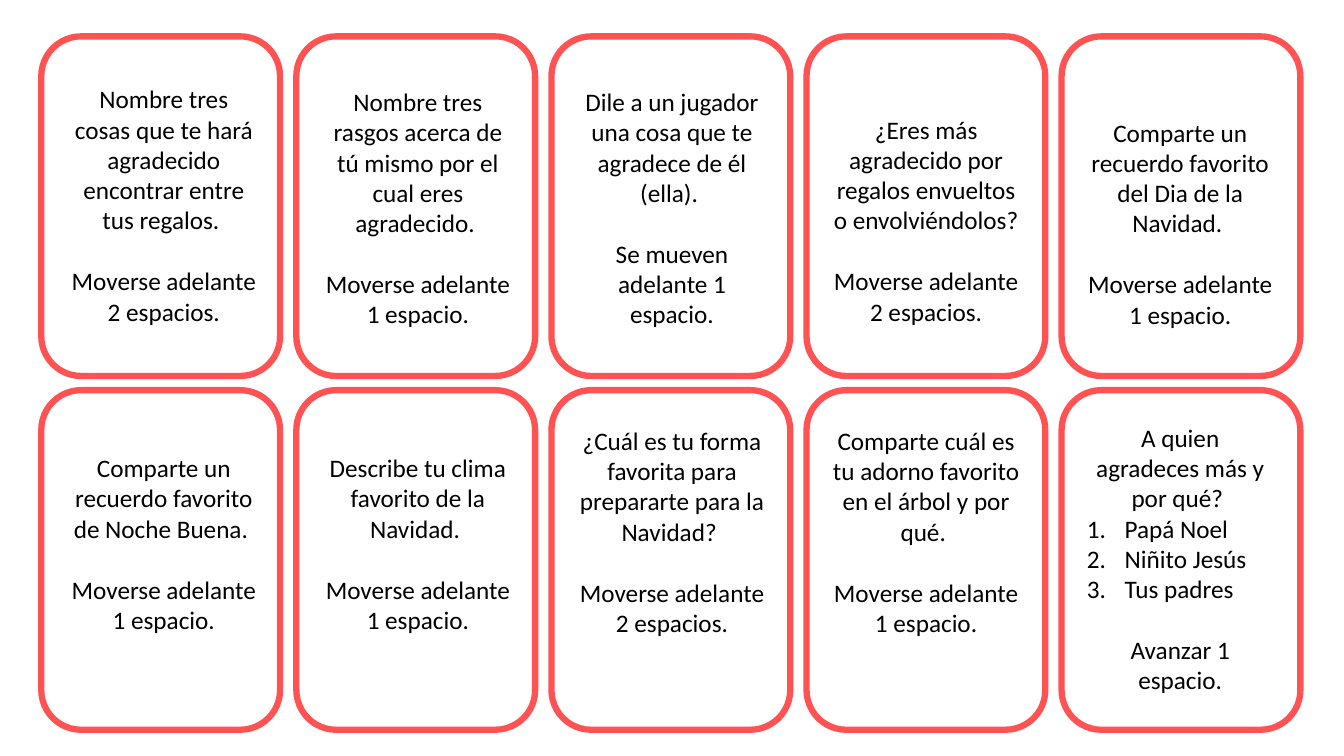
from pptx import Presentation
from pptx.dml.color import RGBColor
from pptx.enum.shapes import MSO_SHAPE as Shape
from pptx.enum.text import MSO_AUTO_SIZE as AutoSize, PP_ALIGN as Align
from pptx.oxml.ns import qn
from pptx.util import Pt
from lxml.etree import SubElement

COLUMNS = 5
CARD_LEFT, CARD_TOP = 29.5, 26
CARD_WIDTH, CARD_HEIGHT = 170.6, 242.6
COLUMN_PITCH, ROW_PITCH = 182.2, 252.7
TEXT_LEFT, TEXT_PITCH, TEXT_WIDTH = 43.2, 181.5, 147.6
LINE_HEIGHT, INSETS = 21.8, 7.2
LIST_INDENT = 27

ONE_SPACE = "Moverse adelante 1 espacio."
TWO_SPACES = "Moverse adelante 2 espacios."

# Each card: text top, line count, prompt, list choices, move
CARDS = [
    (56.2, 8, "Nombre tres cosas que te hará agradecido encontrar entre tus regalos. ", [], TWO_SPACES),
    (58.3, 8, "Nombre tres rasgos acerca de tú mismo por el cual eres agradecido. ", [], ONE_SPACE),
    (58.3, 8, "Dile a un jugador una cosa que te agradece de él (ella). ", [], "Se mueven adelante 1 espacio."),
    (77.8, 7, "¿Eres más agradecido por regalos envueltos o envolviéndolos? ", [], TWO_SPACES),
    (79.9, 7, "Comparte un recuerdo favorito del Dia de la Navidad. ", [], ONE_SPACE),
    (319.7, 6, "Comparte un recuerdo favorito de Noche Buena. ", [], ONE_SPACE),
    (319.7, 6, "Describe tu clima favorito de la Navidad. ", [], ONE_SPACE),
    (300.2, 7, "¿Cuál es tu forma favorita para prepararte para la Navidad? ", [], TWO_SPACES),
    (300.2, 7, "Comparte cuál es tu adorno favorito en el árbol y por qué. ", [], ONE_SPACE),
    (298.1, 9, "A quien agradeces más y por qué? ",
     ["Papá Noel", "Niñito Jesús", "Tus padres"], "Avanzar 1 espacio."),
]


def color(value):
    return RGBColor.from_string(value)


def add_frame(shapes, left, top):
    frame = shapes.add_shape(Shape.ROUNDED_RECTANGLE, Pt(left), Pt(top),
                             Pt(CARD_WIDTH), Pt(CARD_HEIGHT))
    frame.shadow.inherit = False
    frame.fill.solid()
    frame.fill.fore_color.rgb = color("FFFFFF")
    frame.line.color.rgb = color("FF5353")
    frame.line.width = Pt(4.5)


def format_para(para, text, align=Align.CENTER):
    para.text = text
    para.alignment = align
    para.font.name = "Calibri"
    para.font.size = Pt(18)
    para.font.color.rgb = color("000000")


def number_para(para):
    properties = para._p.get_or_add_pPr()
    properties.set("marL", str(Pt(LIST_INDENT)))
    properties.set("indent", str(-Pt(LIST_INDENT)))
    numbering = SubElement(properties, qn("a:buAutoNum"), type="arabicPeriod")
    properties.insert(0, numbering)


def add_card_text(shapes, left, top, lines, prompt, choices, move):
    box = shapes.add_textbox(Pt(left), Pt(top), Pt(TEXT_WIDTH),
                             Pt(lines * LINE_HEIGHT + INSETS))
    frame = box.text_frame
    frame.word_wrap = True
    frame.auto_size = AutoSize.SHAPE_TO_FIT_TEXT
    format_para(frame.paragraphs[0], prompt)
    for choice in choices:
        para = frame.add_paragraph()
        format_para(para, choice, Align.LEFT)
        number_para(para)
    para = frame.add_paragraph()
    format_para(para, move)
    para.space_before = Pt(22)


def add_card(slide, index, text_top, *content):
    row, column = divmod(index, COLUMNS)
    shapes = slide.shapes.add_group_shape().shapes
    add_frame(shapes, CARD_LEFT + column * COLUMN_PITCH, CARD_TOP + row * ROW_PITCH)
    add_card_text(shapes, TEXT_LEFT + column * TEXT_PITCH, text_top, *content)


def main():
    deck = Presentation()
    deck.slide_width, deck.slide_height = Pt(960), Pt(540)
    slide = deck.slides.add_slide(deck.slide_layouts[6])
    for index, card in enumerate(CARDS):
        add_card(slide, index, *card)
    deck.save("out.pptx")


if __name__ == "__main__":
    main()
